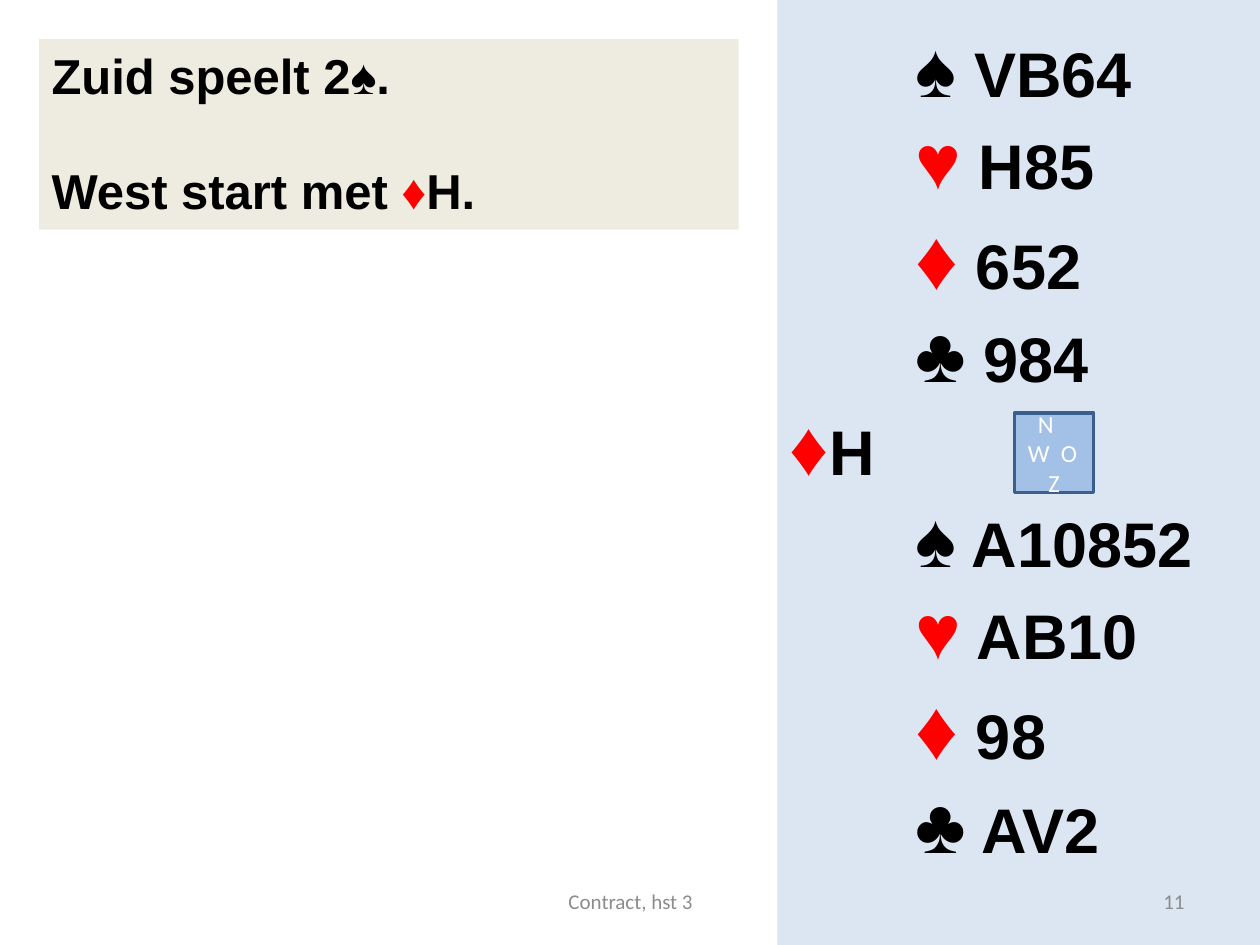
"""Build a bridge slide with the contract, the lead and the two visible hands."""
from dataclasses import dataclass
from typing import Optional

import lxml.etree
import pptx
import pptx.dml.color
import pptx.enum.shapes
import pptx.enum.text
import pptx.oxml.ns
import pptx.util

Cm = pptx.util.Cm
Pt = pptx.util.Pt
Align = pptx.enum.text.PP_ALIGN
Anchor = pptx.enum.text.MSO_ANCHOR


@dataclass(frozen=True)
class Theme:
    card_font: str = "Arial"
    label_font: str = "Calibri"
    black: str = "000000"
    red: str = "FF0000"
    white: str = "FFFFFF"
    grey: str = "8C8C8C"
    panel: str = "DCE6F2"
    note: str = "EEECE1"
    compass: str = "8EB4E3"
    compass_line: str = "3A5F8C"
    compass_opacity: int = 72
    suit_size: int = 44
    diamond_size: int = 48
    rank_size: int = 36
    note_size: int = 28
    compass_size: int = 14
    footer_size: int = 12


THEME = Theme()


@dataclass(frozen=True)
class Box:
    left: float
    top: float
    width: float
    height: float

    def lengths(self) -> tuple:
        return Cm(self.left), Cm(self.top), Cm(self.width), Cm(self.height)


@dataclass(frozen=True)
class Span:
    text: str
    size: int
    color: str = THEME.black
    font: str = THEME.card_font
    bold: bool = True
    spacing: float = 0


@dataclass(frozen=True)
class Line:
    spans: tuple
    align: Align = Align.LEFT
    space_before: float = 0
    indent: float = 0
    right_indent: float = 0


@dataclass(frozen=True)
class Holding:
    suit: str
    ranks: str


NORTH = (Holding("♠", "VB64"), Holding("♥", "H85"), Holding("♦", "652"), Holding("♣", "984"))
SOUTH = (Holding("♠", "A10852"), Holding("♥", "AB10"), Holding("♦", "98"), Holding("♣", "AV2"))


def holding_line(holding: Holding) -> Line:
    """Return one suit of a hand as an indented line."""
    size = THEME.diamond_size if holding.suit == "♦" else THEME.suit_size
    color = THEME.red if holding.suit in "♥♦" else THEME.black
    return Line((Span(holding.suit, size, color), Span(f" {holding.ranks}", THEME.rank_size)),
                indent=2.54)


def label(text: str, size: int, color: str, spacing: float = 0) -> Span:
    """Return a span in the plain label style."""
    return Span(text, size, color, THEME.label_font, False, spacing)


def rgb(color: str) -> pptx.dml.color.RGBColor:
    """Return the colour object for a hexadecimal colour."""
    return pptx.dml.color.RGBColor.from_string(color)


def write_lines(frame, lines: tuple, anchor: Anchor) -> None:
    """Write styled lines into a text frame."""
    frame.word_wrap = True
    frame.vertical_anchor = anchor
    for index, line in enumerate(lines):
        paragraph = frame.add_paragraph() if index else frame.paragraphs[0]
        paragraph.alignment = line.align
        paragraph.space_before = Pt(line.space_before)
        properties = paragraph._p.get_or_add_pPr()
        properties.set("marL", str(Cm(line.indent)))
        properties.set("marR", str(Cm(line.right_indent)))
        for span in line.spans:
            run = paragraph.add_run()
            run.text = span.text
            run.font.name = span.font
            run.font.size = Pt(span.size)
            run.font.bold = span.bold
            run.font.color.rgb = rgb(span.color)
            if span.spacing:
                run._r.get_or_add_rPr().set("spc", str(round(span.spacing * 100)))


def add_panel(slide, box: Box, fill: str, lines: tuple, anchor: Anchor = Anchor.TOP):
    """Add a borderless filled rectangle with text."""
    panel = slide.shapes.add_shape(pptx.enum.shapes.MSO_SHAPE.RECTANGLE, *box.lengths())
    panel.shadow.inherit = False
    panel.fill.solid()
    panel.fill.fore_color.rgb = rgb(fill)
    panel.line.fill.background()
    write_lines(panel.text_frame, lines, anchor)
    return panel


def add_hands(slide) -> None:
    """Add the side panel with North, the lead and South."""
    lead = Line((Span("♦", THEME.suit_size, THEME.red), Span("H", THEME.rank_size)))
    lines = (*map(holding_line, NORTH), lead, *map(holding_line, SOUTH))
    frame = add_panel(slide, Box(15.67, 0, 9.73, 19.05), THEME.panel, lines).text_frame
    frame.margin_top = Cm(0.41)
    frame.margin_bottom = Cm(0.61)


def add_note(slide) -> None:
    """Add the contract and the opening lead."""
    size = THEME.note_size
    add_panel(slide, Box(0.79, 0.79, 14.1, 3.84), THEME.note, (
        Line((Span("Zuid speelt 2♠.", size),)),
        Line((Span("West start met ", size), Span("♦", size, THEME.red), Span("H.", size)),
             space_before=32),
    ))


def add_compass(slide) -> None:
    """Add the translucent compass square."""
    size, color = THEME.compass_size, THEME.white
    compass = add_panel(slide, Box(20.45, 8.33, 1.6, 1.6), THEME.compass, (
        Line((label("N", size, color),), Align.CENTER, right_indent=0.33),
        Line((label("W O", size, color, 1.6),), Align.CENTER, right_indent=0.06),
        Line((label("Z", size, color),), Align.CENTER),
    ), Anchor.MIDDLE)
    compass.text_frame.margin_left = compass.text_frame.margin_right = Cm(0.1)
    compass.line.color.rgb = rgb(THEME.compass_line)
    compass.line.width = Pt(2)
    qn = pptx.oxml.ns.qn
    fill_color = compass._element.spPr.find(qn("a:solidFill")).find(qn("a:srgbClr"))
    alpha = lxml.etree.SubElement(fill_color, qn("a:alpha"))
    alpha.set("val", str(THEME.compass_opacity * 1000))


def add_footer(slide, box: Box, text: str, align: Align) -> None:
    """Add a grey footer text."""
    footer = slide.shapes.add_textbox(*box.lengths())
    span = label(text, THEME.footer_size, THEME.grey)
    write_lines(footer.text_frame, (Line((span,), align),), Anchor.MIDDLE)


def main() -> None:
    """Build and save the slide."""
    deck = pptx.Presentation()
    deck.slide_width, deck.slide_height = Cm(25.4), Cm(19.05)
    slide = deck.slides.add_slide(deck.slide_layouts[6])
    add_hands(slide)
    add_note(slide)
    add_compass(slide)
    add_footer(slide, Box(18.21, 17.65, 5.92, 1.02), "11", Align.RIGHT)
    add_footer(slide, Box(8.69, 17.65, 8.05, 1.02), "Contract, hst 3", Align.CENTER)
    deck.save("out.pptx")


if __name__ == "__main__":
    main()
